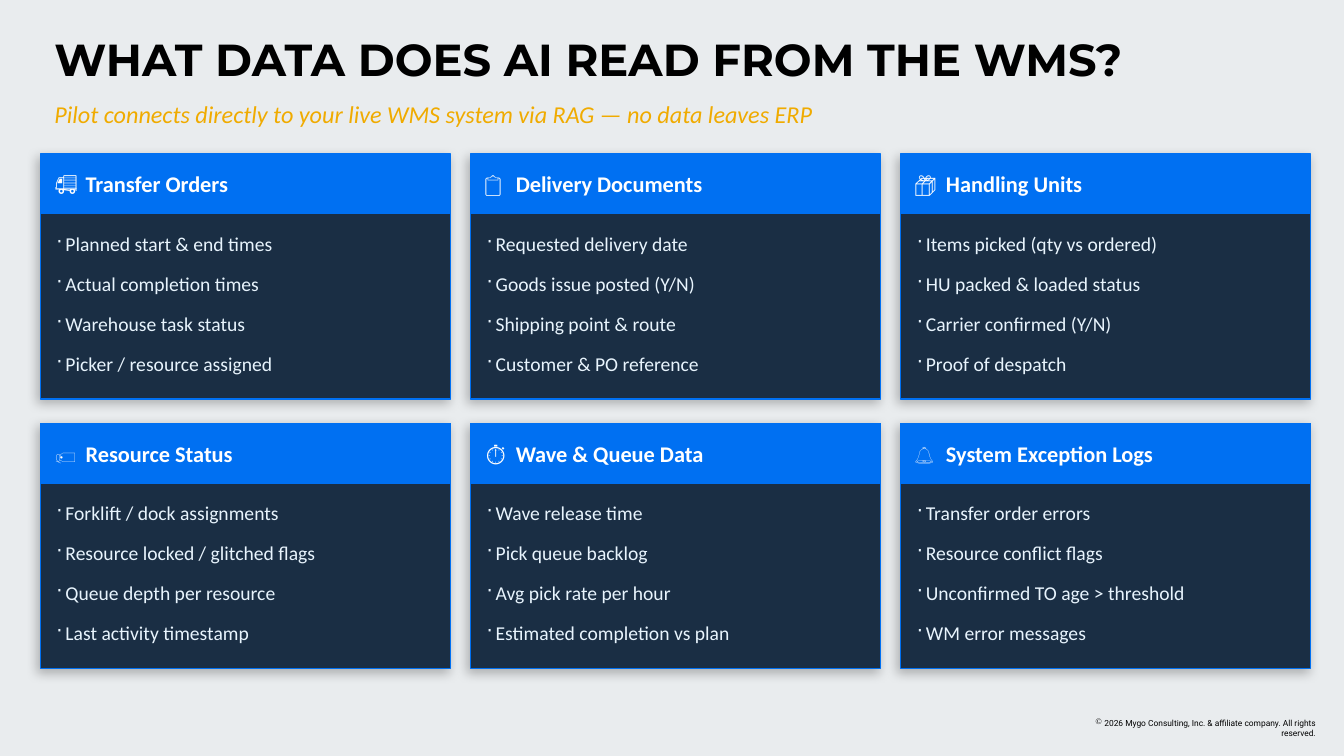
from dataclasses import dataclass

from lxml.etree import SubElement as Sub
from pptx import Presentation
from pptx.dml.color import RGBColor as Rgb
from pptx.enum.shapes import MSO_SHAPE as Kind
from pptx.enum.text import MSO_ANCHOR as Anchor, MSO_AUTO_SIZE as Fit, PP_ALIGN as Align
from pptx.oxml.ns import qn
from pptx.util import Inches, Pt


@dataclass(frozen=True)
class Style:
    size: float
    face: str
    color: str
    bold: bool = False
    slant: bool = False


@dataclass(frozen=True)
class Theme:
    back: str = "E9ECEE"
    panel: str = "1A2E44"
    accent: str = "0070F2"
    shade: str = "000000"
    title: Style = Style(32, "Montserrat", "000000", bold=True)
    lead: Style = Style(17.3, "Calibri", "F0AB00", slant=True)
    head: Style = Style(16, "Calibri", "FFFFFF", bold=True)
    item: Style = Style(14, "Calibri", "E8F4FD")
    legal: Style = Style(6, "Roboto", "000000")


@dataclass(frozen=True)
class Card:
    icon: str
    name: str
    items: tuple[str, ...]


@dataclass(frozen=True)
class Box:
    left: float
    top: float
    width: float
    height: float

    def place(self) -> tuple:
        return tuple(map(Inches, (self.left, self.top, self.width, self.height)))


THEME = Theme()
COLS = 3
LEFT, TOP = 0.4, 1.53
STEP_X, STEP_Y = 4.27, 2.67
WIDE, HIGH, BAND = 4.07, 2.43, 0.59
HANG = 0.09
TAB = 0.31

CARDS = (
    Card("🚚", "Transfer Orders", (
        "Planned start & end times", "Actual completion times",
        "Warehouse task status", "Picker / resource assigned")),
    Card("📋", "Delivery Documents", (
        "Requested delivery date", "Goods issue posted (Y/N)",
        "Shipping point & route", "Customer & PO reference")),
    Card("📦", "Handling Units", (
        "Items picked (qty vs ordered)", "HU packed & loaded status",
        "Carrier confirmed (Y/N)", "Proof of despatch")),
    Card("🏷️", "Resource Status", (
        "Forklift / dock assignments", "Resource locked / glitched flags",
        "Queue depth per resource", "Last activity timestamp")),
    Card("⏱️", "Wave & Queue Data", (
        "Wave release time", "Pick queue backlog",
        "Avg pick rate per hour", "Estimated completion vs plan")),
    Card("🔔", "System Exception Logs", (
        "Transfer order errors", "Resource conflict flags",
        "Unconfirmed TO age > threshold", "WM error messages")),
)


def set_frame(shape, anchor=Anchor.MIDDLE):
    frame = shape.text_frame
    frame.word_wrap = True
    frame.auto_size = Fit.NONE
    frame.vertical_anchor = anchor
    frame.margin_left = frame.margin_right = 0
    frame.margin_top = frame.margin_bottom = 0
    return frame


def add_frame(slide, box: Box, anchor=Anchor.MIDDLE):
    return set_frame(slide.shapes.add_textbox(*box.place()), anchor)


def add_run(para, text: str, style: Style) -> None:
    run = para.add_run()
    run.text = text
    font = run.font
    font.size, font.name = Pt(style.size), style.face
    font.bold, font.italic = style.bold, style.slant
    font.color.rgb = Rgb.from_string(style.color)


def add_mark(para, mark: str) -> None:
    props = para._p.get_or_add_pPr()
    props.set("marL", str(Inches(HANG)))
    props.set("indent", str(-Inches(HANG)))
    Sub(props, qn("a:buChar"), char=mark)


def add_tab(para, stop: float) -> None:
    tabs = Sub(para._p.get_or_add_pPr(), qn("a:tabLst"))
    Sub(tabs, qn("a:tab"), pos=str(Inches(stop)), algn="l")


def add_shade(shape) -> None:
    effects = shape._element.spPr.find(qn("a:effectLst"))
    outer = Sub(effects, qn("a:outerShdw"), blurRad=str(Pt(8)), dist=str(Pt(3)),
                dir=str(135 * 60000), algn="bl", rotWithShape="0")
    color = Sub(outer, qn("a:srgbClr"), val=THEME.shade)
    Sub(color, qn("a:alpha"), val="25000")


def add_rect(slide, box: Box, fill: str):
    rect = slide.shapes.add_shape(Kind.RECTANGLE, *box.place())
    rect.shadow.inherit = False
    rect.fill.solid()
    rect.fill.fore_color.rgb = Rgb.from_string(fill)
    rect.line.color.rgb = Rgb.from_string(THEME.accent)
    rect.line.width = Pt(1)
    return rect


def add_card(slide, card: Card, left: float, top: float) -> None:
    add_shade(add_rect(slide, Box(left, top, WIDE, HIGH), THEME.panel))
    add_rect(slide, Box(left, top, WIDE, BAND), THEME.accent)

    head = add_frame(slide, Box(left + 0.14, top + 0.07, 3.8, 0.45)).paragraphs[0]
    add_tab(head, TAB)
    add_run(head, card.icon + "\t", THEME.head)
    add_run(head, card.name, THEME.head)

    frame = add_frame(slide, Box(left + 0.16, top + 0.7, 3.76, 1.57))
    for i, item in enumerate(card.items):
        para = frame.add_paragraph() if i else frame.paragraphs[0]
        if i:
            para.space_before = Pt(11.8)
        add_mark(para, "·")
        add_run(para, item, THEME.item)


def add_title(slide, text: str) -> None:
    title = slide.shapes.title
    box = Box(0.54, 0.24, 12.27, 0.69)
    title.left, title.top, title.width, title.height = box.place()
    para = set_frame(title).paragraphs[0]
    para.alignment = Align.LEFT
    add_run(para, text, THEME.title)


def main() -> None:
    deck = Presentation()
    deck.slide_width, deck.slide_height = Inches(13.34), Inches(7.5)
    slide = deck.slides.add_slide(deck.slide_layouts[5])
    slide.background.fill.solid()
    slide.background.fill.fore_color.rgb = Rgb.from_string(THEME.back)

    add_title(slide, "WHAT DATA DOES AI READ FROM THE WMS?")
    lead = add_frame(slide, Box(0.54, 0.91, 12.27, 0.43)).paragraphs[0]
    add_run(lead, "Pilot connects directly to your live WMS system via RAG — no data leaves ERP",
            THEME.lead)

    for i, card in enumerate(CARDS):
        row, col = divmod(i, COLS)
        add_card(slide, card, LEFT + col * STEP_X, TOP + row * STEP_Y)

    legal = add_frame(slide, Box(10.7, 7.12, 2.36, 0.2), Anchor.TOP).paragraphs[0]
    legal.alignment = Align.RIGHT
    add_mark(legal, "©")
    add_run(legal, "2026 Mygo Consulting, Inc. & affiliate company. All rights reserved.",
            THEME.legal)
    deck.save("out.pptx")


if __name__ == "__main__":
    main()
